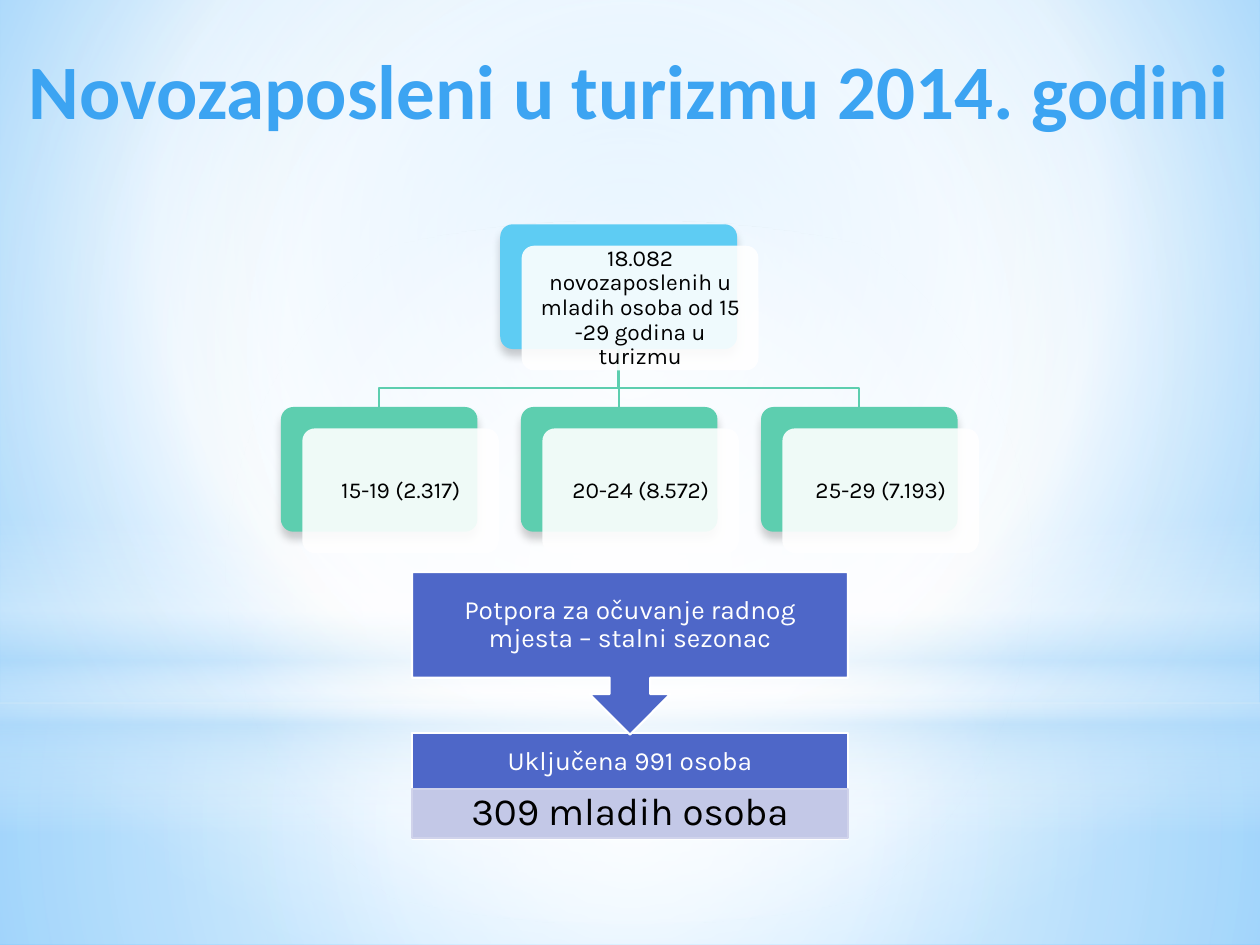
from dataclasses import dataclass

import pptx
import pptx.dml.color
import pptx.enum.shapes
import pptx.enum.text
import pptx.oxml
import pptx.oxml.ns
import pptx.util

Inches = pptx.util.Inches
Shape = pptx.enum.shapes.MSO_SHAPE
Anchor = pptx.enum.text.MSO_ANCHOR

COLORS = {
    "title": "3CA4F2", "total": "5ECCF3", "group": "5DCEAF",
    "support": "4E67C8", "youth": "D0D3EB", "white": "FFFFFF",
    "black": "000000", "haze": "B4DCFA", "sky": "9ED5FF", "deep_sky": "5BB9FF",
}
CENTER = (50, 50, 50, 50)


@dataclass
class Stop:
    position: int
    color: str
    opacity: int = 100


@dataclass
class Backdrop:
    preset: int
    box: tuple
    stops: list
    focus: tuple | None = CENTER


@dataclass
class Card:
    text: str
    left: float
    top: float
    width: float
    color: str


BACKDROPS = [
    Backdrop(Shape.RECTANGLE, (0, 5.58, 10, 1.92),
             [Stop(0, "white", 91), Stop(37, "white", 76), Stop(100, "haze", 79)]),
    Backdrop(Shape.RECTANGLE, (0, 0, 10, 5.58),
             [Stop(0, "white", 89), Stop(48, "white", 62), Stop(100, "haze", 79)]),
    Backdrop(Shape.RECTANGLE, (0, 4.12, 10, 2.5),
             [Stop(0, "white", 0), Stop(29, "white", 30), Stop(45, "haze", 40),
              Stop(55, "white", 26), Stop(65, "haze", 60), Stop(100, "white", 0)],
             focus=None),
    Backdrop(Shape.OVAL, (0, 1.75, 10, 5.58),
             [Stop(0, "white"), Stop(56, "white", 0)]),
]

CARD_HEIGHT, CARD_OFFSET = 0.99, 0.17
GROUP_LEFT, GROUP_TOP, GROUP_WIDTH, GROUP_STEP = 2.23, 3.23, 1.56, 1.905
TOTAL = Card("18.082 novozaposlenih u mladih osoba od 15 -29 godina u turizmu",
             3.97, 1.78, 1.88, "total")
AGE_GROUPS = [
    Card(text, GROUP_LEFT + i * GROUP_STEP, GROUP_TOP, GROUP_WIDTH, "group")
    for i, text in enumerate(["15-19 (2.317)", "20-24 (8.572)", "25-29 (7.193)"])
]


def rgb(color: str):
    return pptx.dml.color.RGBColor.from_string(COLORS[color])


def xml(markup: str):
    """Parse one DrawingML element whose tag is followed by {ns}."""
    return pptx.oxml.parse_xml(markup.replace("{ns}", pptx.oxml.ns.nsdecls("a")))


def set_opacity(fill_parent, percent: int) -> None:
    color = fill_parent.find(".//" + pptx.oxml.ns.qn("a:srgbClr"))
    color.append(xml(f'<a:alpha {{ns}} val="{percent * 1000}"/>'))


def set_gradient(fill, parent, stops: list, focus: tuple | None) -> None:
    """Fill with a circular gradient around focus, or a vertical one without it."""
    fill.solid()
    marks = "".join(
        f'<a:gs pos="{s.position * 1000}"><a:srgbClr val="{COLORS[s.color]}">'
        f'<a:alpha val="{s.opacity * 1000}"/></a:srgbClr></a:gs>' for s in stops)
    direction = '<a:lin ang="5400000" scaled="0"/>'
    if focus:
        sides = " ".join(f'{side}="{value * 1000}"' for side, value in zip("ltrb", focus))
        direction = f'<a:path path="circle"><a:fillToRect {sides}/></a:path>'
    solid = parent.find(pptx.oxml.ns.qn("a:solidFill"))
    parent.replace(solid, xml(
        f'<a:gradFill {{ns}} rotWithShape="1"><a:gsLst>{marks}</a:gsLst>'
        f'{direction}</a:gradFill>'))


def write(shape, text: str, *, size: float, color: str, font: str = "Karla",
          bold: bool = False, anchor=Anchor.MIDDLE, spacing: float = 0.9,
          margins: tuple = (0.05, 0.05, 0.05, 0.05)) -> None:
    frame = shape.text_frame
    frame.word_wrap = True
    frame.auto_size = pptx.enum.text.MSO_AUTO_SIZE.NONE
    frame.vertical_anchor = anchor
    (frame.margin_left, frame.margin_top,
     frame.margin_right, frame.margin_bottom) = map(Inches, margins)
    paragraph = frame.paragraphs[0]
    paragraph.alignment = pptx.enum.text.PP_ALIGN.CENTER
    paragraph.line_spacing = spacing
    run = paragraph.add_run()
    run.text = text
    run.font.name, run.font.bold = font, bold
    run.font.size = pptx.util.Pt(size)
    run.font.color.rgb = rgb(color)


def add_block(slide, preset, box: tuple, fill: str, line: str | None = None,
              opacity: int = 100):
    block = slide.shapes.add_shape(preset, *map(Inches, box))
    block.shadow.inherit = False
    block.fill.solid()
    block.fill.fore_color.rgb = rgb(fill)
    if opacity < 100:
        set_opacity(block._element.spPr, opacity)
    if line:
        block.line.color.rgb = rgb(line)
        block.line.width = pptx.util.Pt(1.25)
    else:
        block.line.fill.background()
    return block


def add_backdrop(slide, backdrop: Backdrop) -> None:
    panel = add_block(slide, backdrop.preset, backdrop.box, "white")
    set_gradient(panel.fill, panel._element.spPr, backdrop.stops, backdrop.focus)


def add_card(slide, card: Card) -> None:
    """Draw a coloured card with a shadow and a translucent text card over it."""
    back = add_block(slide, Shape.ROUNDED_RECTANGLE,
                     (card.left, card.top, card.width, CARD_HEIGHT), card.color)
    effects = back._element.spPr.find(pptx.oxml.ns.qn("a:effectLst"))
    effects.append(xml(
        f'<a:outerShdw {{ns}} blurRad="{pptx.util.Pt(5)}" dist="{pptx.util.Pt(4)}" '
        'dir="5400000" rotWithShape="0"><a:srgbClr val="000000">'
        '<a:alpha val="20000"/></a:srgbClr></a:outerShdw>'))
    front = add_block(slide, Shape.ROUNDED_RECTANGLE,
                      (card.left + CARD_OFFSET, card.top + CARD_OFFSET,
                       card.width, CARD_HEIGHT), "white", opacity=90)
    back.adjustments[0] = front.adjustments[0] = 0.1
    write(front, card.text, size=13, color="black")


def add_branch(slide, parent: Card, child: Card) -> None:
    start_x, start_y = parent.left + parent.width / 2, parent.top + CARD_HEIGHT
    end_x, end_y, bend_y = child.left + child.width / 2, child.top, 3.08
    if abs(end_x - start_x) < 0.05:
        branch = slide.shapes.add_connector(
            pptx.enum.shapes.MSO_CONNECTOR.STRAIGHT,
            *map(Inches, (start_x, start_y, start_x, end_y)))
        branch._element.spPr.append(xml("<a:effectLst {ns}/>"))
    else:
        outline = slide.shapes.build_freeform(Inches(start_x), Inches(start_y))
        corners = [(start_x, bend_y), (end_x, bend_y), (end_x, end_y)]
        outline.add_line_segments([(Inches(x), Inches(y)) for x, y in corners], close=False)
        branch = outline.convert_to_shape()
        branch.fill.background()
        branch.shadow.inherit = False
    branch.line.color.rgb = rgb("group")
    branch.line.width = pptx.util.Pt(1.25)


def add_support_flow(slide) -> None:
    left, width = 3.27, 3.46
    included = add_block(slide, Shape.RECTANGLE, (left, 5.82, width, 0.84), "support", "white")
    write(included, "Uključena 991 osoba", size=15, color="white",
          margins=(0.12, 0.12, 0.12, 0.51))
    youth = add_block(slide, Shape.RECTANGLE, (left, 6.26, width, 0.39), "youth", "youth", 90)
    write(youth, "309 mladih osoba", size=22, color="black", margins=(0.17, 0.03, 0.17, 0.03))
    support = add_block(slide, Shape.DOWN_ARROW_CALLOUT, (left, 4.54, width, 1.29),
                        "support", "white")
    write(support, "Potpora za očuvanje radnog mjesta – stalni sezonac",
          size=15, color="white", margins=(0.12, 0.12, 0.12, 0.12))


def main() -> None:
    deck = pptx.Presentation()
    deck.slide_width, deck.slide_height = Inches(10), Inches(7.5)
    slide = deck.slides.add_slide(deck.slide_layouts[5])
    background = slide.background.fill
    background.solid()
    set_gradient(background, slide._element.find(".//" + pptx.oxml.ns.qn("p:bgPr")),
                 [Stop(0, "sky"), Stop(60, "white"), Stop(100, "deep_sky")], (20, 10, 20, 60))
    for backdrop in BACKDROPS:
        add_backdrop(slide, backdrop)

    title = slide.shapes.title
    title.left, title.top, title.width, title.height = map(Inches, (0, 0.29, 10, 0.77))
    write(title, "Novozaposleni u turizmu 2014. godini", size=44, color="title",
          font="Calibri", bold=True, anchor=Anchor.TOP, spacing=1.0,
          margins=(0.1, 0.05, 0.1, 0.05))
    slide.shapes._spTree.append(title._element)  # bring in front of the backdrops

    for group in AGE_GROUPS:
        add_branch(slide, TOTAL, group)
    for card in [TOTAL, *AGE_GROUPS]:
        add_card(slide, card)
    add_support_flow(slide)
    deck.save("out.pptx")


if __name__ == "__main__":
    main()
